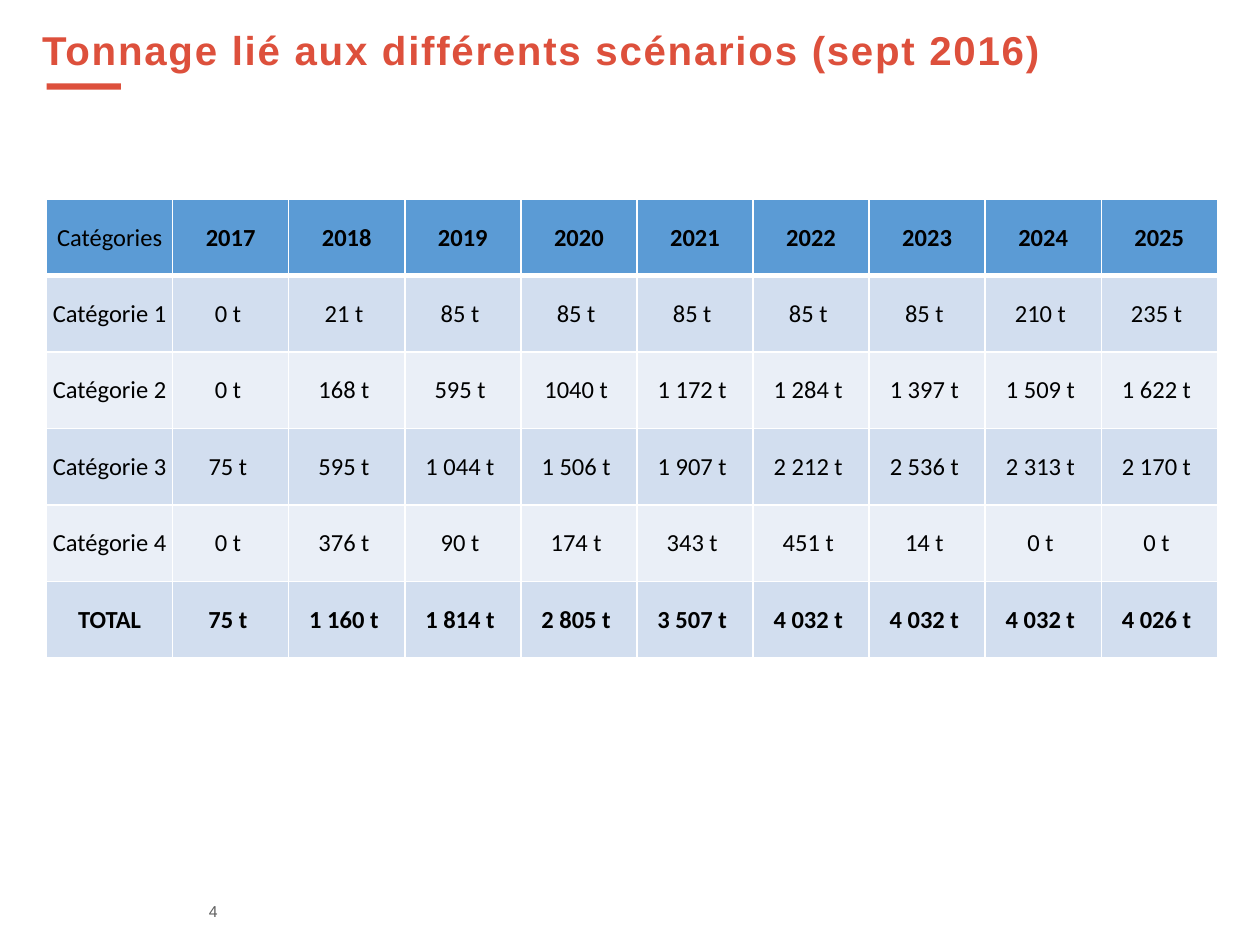
from dataclasses import dataclass

from lxml.etree import SubElement
from pptx import Presentation
from pptx.dml.color import RGBColor
from pptx.enum.shapes import MSO_SHAPE
from pptx.enum.text import MSO_ANCHOR, PP_ALIGN
from pptx.oxml.ns import qn
from pptx.util import Cm, Pt

COLOURS = {
    "accent": "DD503C",
    "number": "5F5F5F",
    "text": "000000",
    "header": "5B9BD5",
    "dark_band": "D2DEEF",
    "light_band": "EAEFF7",
    "border": "FFFFFF",
}
YEARS = range(2017, 2026)


@dataclass
class TonnageRow:
    label: str
    tonnages: list[str]
    bold: bool = False


ROWS = [
    TonnageRow("Catégorie 1", ["0", "21", "85", "85", "85", "85", "85", "210", "235"]),
    TonnageRow("Catégorie 2", ["0", "168", "595", "1040", "1 172", "1 284", "1 397", "1 509", "1 622"]),
    TonnageRow("Catégorie 3", ["75", "595", "1 044", "1 506", "1 907", "2 212", "2 536", "2 313", "2 170"]),
    TonnageRow("Catégorie 4", ["0", "376", "90", "174", "343", "451", "14", "0", "0"]),
    TonnageRow("TOTAL", ["75", "1 160", "1 814", "2 805", "3 507", "4 032", "4 032", "4 032", "4 026"], bold=True),
]


def colour(name: str) -> RGBColor:
    return RGBColor.from_string(COLOURS[name])


def write(frame, text: str, *, size: float, font: str = "Arial", ink: str = "text",
          bold: bool = False, align=PP_ALIGN.LEFT, line_spacing: float = 1.0,
          letter_spacing: float = 0) -> None:
    para = frame.paragraphs[0]
    para.alignment = align
    para.line_spacing = line_spacing
    span = para.add_run()
    span.text = text
    span.font.size = Pt(size)
    span.font.name = font
    span.font.bold = bold
    span.font.color.rgb = colour(ink)
    if letter_spacing:
        span.font._element.set("spc", str(int(letter_spacing * 100)))


def add_text_box(page, left: float, top: float, width: float, height: float,
                 text: str, *, anchor=MSO_ANCHOR.TOP, **text_format) -> None:
    box = page.shapes.add_textbox(Cm(left), Cm(top), Cm(width), Cm(height))
    frame = box.text_frame
    frame.word_wrap = True
    frame.vertical_anchor = anchor
    write(frame, text, **text_format)


def add_border(cell, side: str, width: float) -> None:
    line = SubElement(cell._tc.get_or_add_tcPr(), qn(f"a:ln{side}"), w=str(Pt(width)))
    fill = SubElement(line, qn("a:solidFill"))
    SubElement(fill, qn("a:srgbClr"), val=COLOURS["border"])


def format_cell(cell, text: str, *, bold: bool, fill: str,
                top_border: float = 1, bottom_border: float = 1) -> None:
    cell.margin_left = cell.margin_right = cell.margin_top = cell.margin_bottom = 0
    cell.vertical_anchor = MSO_ANCHOR.MIDDLE
    write(cell.text_frame, text, size=14, font="Calibri", bold=bold, align=PP_ALIGN.CENTER)
    # Borders come before the fill, as the schema requires
    for side, width in (("L", 1), ("R", 1), ("T", top_border), ("B", bottom_border)):
        add_border(cell, side, width)
    cell.fill.solid()
    cell.fill.fore_color.rgb = colour(fill)


def add_tonnage_table(page) -> None:
    label_width, year_width, row_height = Cm(2.54), Cm(2.34), Cm(1.54)
    row_count, column_count = len(ROWS) + 1, len(YEARS) + 1
    table = page.shapes.add_table(
        row_count, column_count, Cm(0.94), Cm(4.02),
        label_width + year_width * len(YEARS), row_height * row_count,
    ).table
    for index, column in enumerate(table.columns):
        column.width = year_width if index else label_width
    for row in table.rows:
        row.height = row_height

    for index, heading in enumerate(["Catégories", *map(str, YEARS)]):
        format_cell(table.cell(0, index), heading, bold=index > 0,
                    fill="header", bottom_border=3)
    for row_index, row in enumerate(ROWS, start=1):
        band = "dark_band" if row_index % 2 else "light_band"
        texts = [row.label, *(f"{tonnage} t " for tonnage in row.tonnages)]
        for index, text in enumerate(texts):
            format_cell(table.cell(row_index, index), text, bold=row.bold,
                        fill=band, top_border=3 if row_index == 1 else 1)


def add_title_rule(page) -> None:
    rule = page.shapes.add_shape(MSO_SHAPE.RECTANGLE, Cm(0.94), Cm(1.68), Cm(1.5), Cm(0.13))
    rule.shadow.inherit = False
    rule.fill.solid()
    rule.fill.fore_color.rgb = colour("accent")
    rule.line.fill.background()


def main() -> None:
    deck = Presentation()
    deck.slide_width, deck.slide_height = Cm(25.4), Cm(19.05)
    page = deck.slides.add_slide(deck.slide_layouts[6])
    add_text_box(page, 3.96, 18.14, 0.94, 0.46, "4", size=9, ink="number",
                 anchor=MSO_ANCHOR.MIDDLE)
    add_text_box(page, 0.6, 0.5, 21.92, 1.83,
                 "Tonnage lié aux différents scénarios (sept 2016)", size=23,
                 ink="accent", bold=True, line_spacing=0.9, letter_spacing=1)
    add_title_rule(page)
    add_tonnage_table(page)
    deck.save("out.pptx")


if __name__ == "__main__":
    main()
